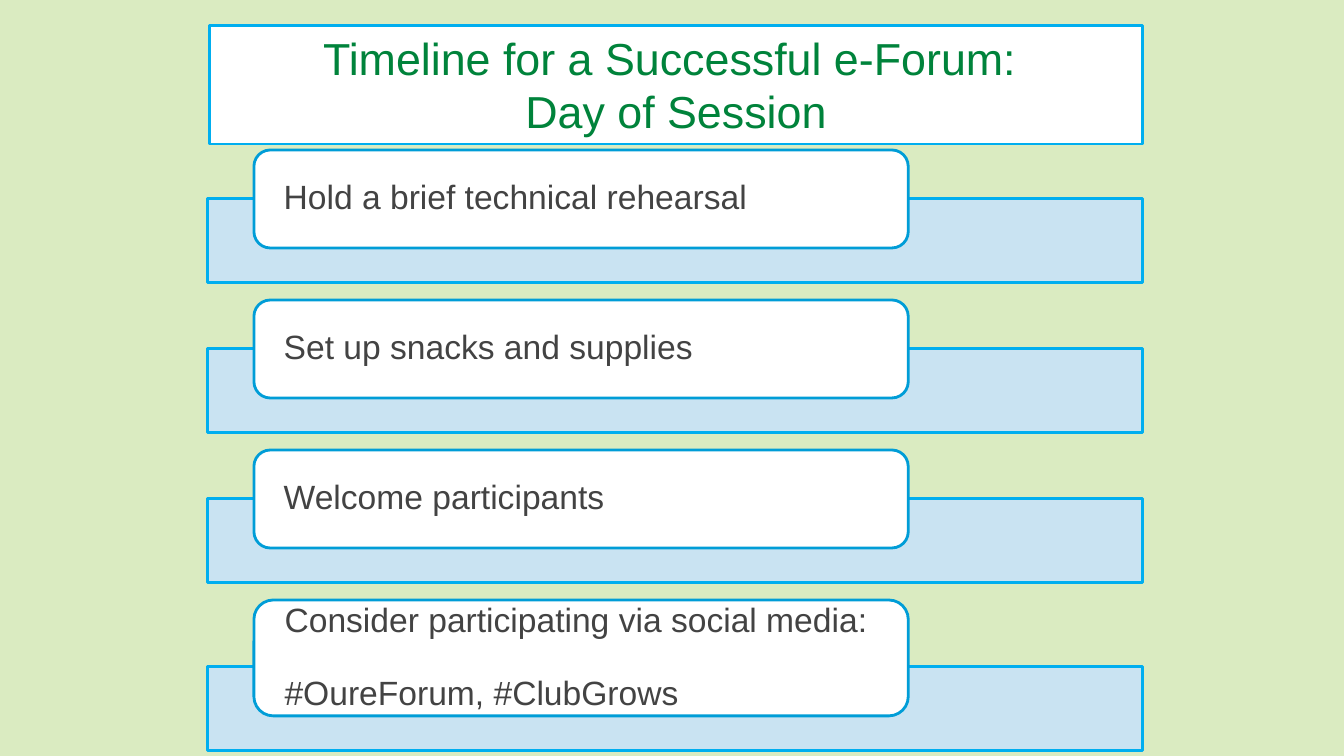
from lxml.etree import SubElement
from pptx import Presentation
from pptx.dml.color import RGBColor
from pptx.enum.shapes import MSO_SHAPE as Shape
from pptx.enum.text import MSO_ANCHOR as Anchor, PP_ALIGN as Align
from pptx.oxml.ns import qn
from pptx.util import Cm, Pt

COLORS = {
    "background": "DAEBC1",
    "white": "FFFFFF",
    "band": "C8E3F9",
    "band_line": "00AEEF",
    "card_line": "009DD7",
    "title": "00833B",
    "step": "434343",
}
TITLE = "Timeline for a Successful e-Forum: \vDay of Session"
STEPS = [
    (["Hold a brief technical rehearsal"], 2.47),
    (["Set up snacks and supplies"], 2.47),
    (["Welcome participants"], 2.47),
    (["Consider participating via social media:", "#OureForum, #ClubGrows"], 2.92),
]
STEP_PITCH = 3.78
BAND_OVERLAP = 1.24


def color(name):
    return RGBColor.from_string(COLORS[name])


def add_box(slide, preset, left, top, width, height, fill, line):
    box = slide.shapes.add_shape(preset, Cm(left), Cm(top), Cm(width), Cm(height))
    box.shadow.inherit = False
    box.fill.solid()
    box.fill.fore_color.rgb = color(fill)
    box.line.color.rgb = color(line)
    box.line.width = Pt(2)
    return box


def format_paragraph(paragraph, size, font_color, align):
    paragraph.alignment = align
    for run in paragraph.runs:
        run.font.name = "Arial"
        run.font.size = Pt(size)
        run.font.color.rgb = color(font_color)


def add_title(slide):
    title = add_box(slide, Shape.RECTANGLE, 5.29, 0.64, 23.5, 2.99, "white", "band_line")
    frame = title.text_frame
    frame.word_wrap = True
    frame.vertical_anchor = Anchor.TOP
    frame.text = TITLE
    format_paragraph(frame.paragraphs[0], 32, "title", Align.CENTER)


def add_band(slide, top):
    band = add_box(slide, Shape.RECTANGLE, 5.24, top, 23.56, 2.11, "band", "band_line")
    fill_color = band.fill._xPr.find(qn("a:solidFill"))[0]
    SubElement(fill_color, qn("a:alpha"), val="89000")


def add_card(slide, lines, top, height):
    card = add_box(slide, Shape.ROUNDED_RECTANGLE, 6.4, top, 16.49, height,
                   "white", "card_line")
    card.adjustments[0] = 0.167
    frame = card.text_frame
    frame.word_wrap = True
    frame.vertical_anchor = Anchor.MIDDLE
    frame.margin_left = frame.margin_right = Cm(0.63)
    frame.margin_top = frame.margin_bottom = 0
    frame.text = "\n".join(lines)
    for paragraph in frame.paragraphs:
        format_paragraph(paragraph, 24, "step", Align.LEFT)
        paragraph.line_spacing = 0.9
    for paragraph in frame.paragraphs[1:]:
        paragraph.space_before = Pt(26)


def main():
    deck = Presentation()
    deck.slide_width, deck.slide_height = Cm(33.87), Cm(19.05)
    slide = deck.slides.add_slide(deck.slide_layouts[6])
    slide.background.fill.solid()
    slide.background.fill.fore_color.rgb = color("background")
    add_title(slide)
    for number, (lines, height) in enumerate(STEPS, start=1):
        top = number * STEP_PITCH
        add_band(slide, top + height - BAND_OVERLAP)
        add_card(slide, lines, top, height)
    deck.save("out.pptx")


if __name__ == "__main__":
    main()
